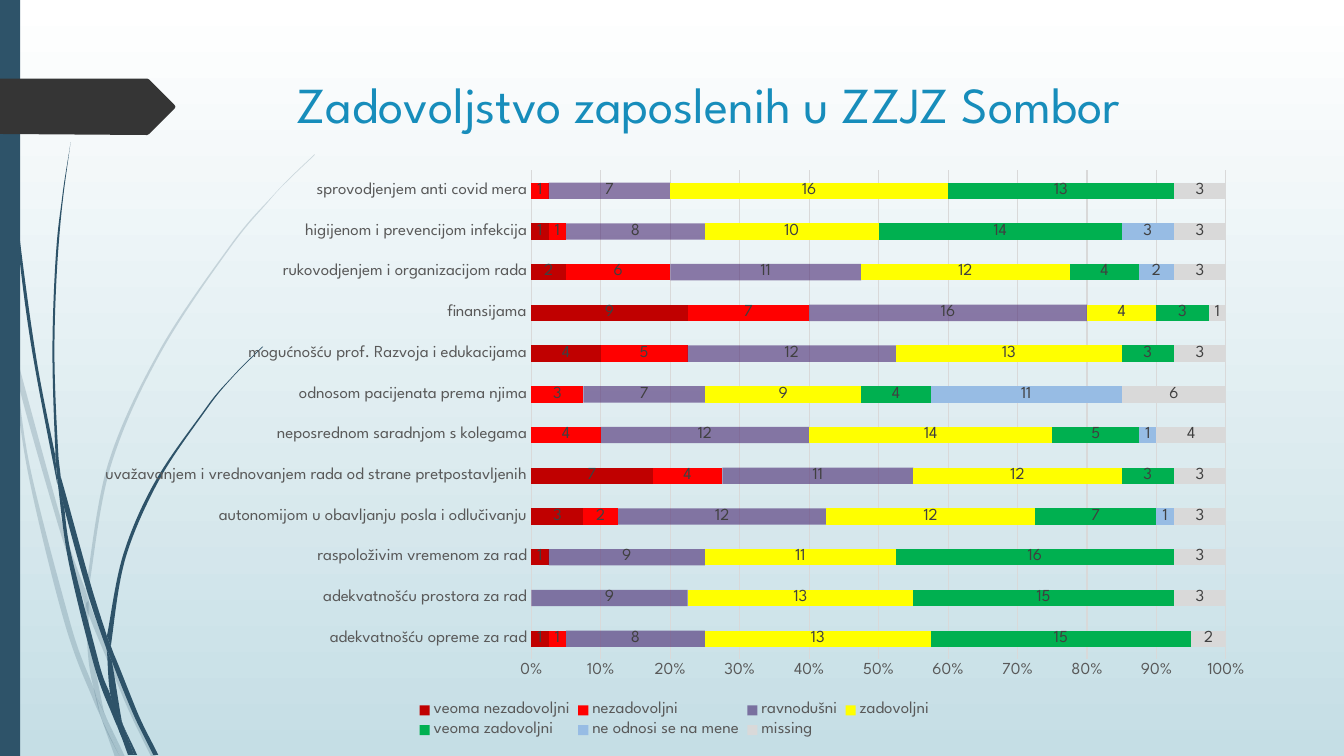
import dataclasses

import lxml.etree
import pptx
import pptx.chart.data
import pptx.dml.color
import pptx.enum.chart
import pptx.enum.shapes
import pptx.enum.text
import pptx.oxml
import pptx.oxml.ns
import pptx.util

PX = 9144  # one px is a hundredth of an inch


@dataclasses.dataclass(frozen=True)
class Theme:
    font: str = "League Spartan"
    title_size: int = 36
    chart_size: int = 12
    title: str = "178DBB"
    accent: str = "2E5369"
    tag: str = "353535"
    axis_text: str = "595959"
    label_text: str = "404040"
    grid: str = "D9D9D9"
    background: tuple = ("FFFFFF", "C5DEE5")


# Each blade of grass is a ring of smooth edges that meet at corners
PALE_BLADES = [
    ([(11, 350), (9, 322), (0, 282)], [(0, 299), (10, 344)]),
    ([(14, 345), (17, 376), (58, 522), (84, 599)], [(85, 586), (62, 520), (14, 345)]),
    ([(88, 596), (88, 610), (123, 694), (150, 751)], [(155, 751), (127, 692), (92, 607)]),
    ([(105, 711), (119, 751)], [(124, 751), (105, 711)]),
    ([(11, 350), (28, 470), (65, 621), (92, 693), (101, 714)],
     [(99, 707), (93, 683), (70, 619), (31, 469), (17, 376), (11, 350)]),
    ([(84, 599), (87, 646), (93, 683), (105, 711)], [(103, 706), (91, 646), (88, 610)]),
    ([(312, 153), (289, 175), (268, 197), (228, 244), (158, 348), (107, 461), (85, 584)],
     [(88, 596)],
     [(88, 584), (110, 462), (160, 349), (229, 245), (268, 198), (290, 175), (312, 154)]),
    ([(101, 714), (114, 751)], [(119, 751), (101, 714)]),
    ([(85, 586), (84, 599)], [(88, 610), (88, 596)]),
    ([(93, 683), (101, 714), (119, 751)], [(105, 711), (96, 692)]),
]
DARK_BLADES = [
    ([(3, 0), (4, 48), (7, 110), (17, 233), (33, 355), (57, 481)],
     [(55, 453), (36, 355), (19, 232), (8, 109), (5, 48), (4, 0)]),
    ([(60, 472), (64, 505), (88, 592), (106, 645)], [(106, 631), (93, 590), (60, 472)]),
    ([(110, 641), (111, 656), (132, 708), (152, 749)], [(157, 749), (136, 706), (113, 649)]),
    ([(57, 477), (68, 557), (93, 659), (111, 708), (117, 722)],
     [(116, 717), (110, 691), (98, 657), (72, 556), (64, 505)]),
    ([(70, 141), (62, 193), (56, 245), (52, 349), (55, 449), (60, 472)],
     [(58, 453), (54, 349), (58, 245), (63, 193), (70, 141)]),
    ([(122, 719), (133, 749)], [(136, 749), (122, 719)]),
    ([(55, 449), (57, 477), (64, 505)], [(60, 472), (55, 449)]),
    ([(260, 344), (231, 373), (204, 405), (156, 474), (122, 551), (106, 631)], [(110, 641)],
     [(111, 633), (125, 552), (158, 476), (205, 406), (231, 374), (261, 344)]),
    ([(117, 722), (127, 749)], [(131, 749), (117, 722)]),
    ([(106, 645), (110, 691), (122, 719)], [(121, 716), (111, 656)]),
    ([(106, 631), (106, 645)], [(111, 656), (110, 641)]),
    ([(110, 691), (117, 722), (130, 749)], [(133, 749), (122, 719), (116, 706)]),
]
TAG_OUTLINE = [(0, 78), (146, 78), (148, 79), (173, 104), (174, 106), (173, 108),
               (148, 133), (146, 134), (0, 133)]

CATEGORIES = [
    "adekvatnošću opreme za rad", "adekvatnošću prostora za rad",
    "raspoloživim vremenom za rad", "autonomijom u obavljanju posla i odlučivanju",
    "uvažavanjem i vrednovanjem rada od strane pretpostavljenih",
    "neposrednom saradnjom s kolegama", "odnosom pacijenata prema njima",
    "mogućnošću prof. Razvoja i edukacijama", "finansijama",
    "rukovodjenjem i organizacijom rada", "higijenom i prevencijom infekcija",
    "sprovodjenjem anti covid mera",
]
# Name, colour, opacity in percent, values
SERIES = [
    ("veoma nezadovoljni", "C00000", 100, [1, None, 1, 3, 7, None, None, 4, 9, 2, 1, None]),
    ("nezadovoljni", "FF0000", 100, [1, None, None, 2, 4, 4, 3, 5, 7, 6, 1, 1]),
    ("ravnodušni", "3F1C6A", 57, [8, 9, 9, 12, 11, 12, 7, 12, 16, 11, 8, 7]),
    ("zadovoljni", "FFFF00", 100, [13, 13, 11, 12, 12, 14, 9, 13, 4, 12, 10, 16]),
    ("veoma zadovoljni", "00B050", 100, [15, 15, 16, 7, 3, 5, 4, 3, 3, 4, 14, 13]),
    ("ne odnosi se na mene", "97BCE4", 100,
     [None, None, None, 1, None, 1, 11, None, None, 2, 3, None]),
    ("missing", "D9D9D9", 100, [2, 3, 3, 3, 3, 4, 6, 3, 1, 3, 3, 3]),
]


def rgb(color):
    return pptx.dml.color.RGBColor.from_string(color)


def bezier_points(edge):
    """Two handles and an end point for each step along a smooth edge."""
    padded = [edge[0], *edge, edge[-1]]
    points = []
    for before, start, end, after in zip(padded, padded[1:], padded[2:], padded[3:]):
        points.append(tuple(s + (e - b) / 6 for b, s, e in zip(before, start, end)))
        points.append(tuple(e - (a - s) / 6 for s, e, a in zip(start, end, after)))
        points.append(end)
    return points


class SlideBuilder:
    def __init__(self, slide, theme):
        self.slide, self.theme = slide, theme

    def background(self):
        fill = self.slide.background.fill
        fill.gradient()
        fill.gradient_angle = 270
        for stop, color, position in zip(fill.gradient_stops, self.theme.background, (0, 1)):
            stop.color.rgb, stop.position = rgb(color), position

    def paint(self, fill, color, opacity=100):
        fill.solid()
        fill.fore_color.rgb = rgb(color)
        if opacity < 100:
            color_node = next(fill._xPr.iter(pptx.oxml.ns.qn("a:srgbClr")))
            alpha = lxml.etree.SubElement(color_node, pptx.oxml.ns.qn("a:alpha"))
            alpha.set("val", str(opacity * 1000))

    def finish(self, shape, color, opacity=100):
        shape.shadow.inherit = False
        shape.line.fill.background()
        self.paint(shape.fill, color, opacity)

    def rectangle(self, left, top, width, height, color):
        shape = self.slide.shapes.add_shape(
            pptx.enum.shapes.MSO_SHAPE.RECTANGLE,
            left * PX, top * PX, width * PX, height * PX)
        self.finish(shape, color)

    def outline(self, points, color, opacity=100):
        builder = self.slide.shapes.build_freeform(*points[0], scale=PX)
        builder.add_line_segments(points[1:], close=True)
        shape = builder.convert_to_shape()
        self.finish(shape, color, opacity)
        return shape

    def blade(self, edges, opacity):
        points = [edges[0][0]]
        for edge in edges:
            if edge[0] != points[-1]:
                points += bezier_points([points[-1], edge[0]])
            points += bezier_points(edge)
        shape = self.outline(points, self.theme.accent, opacity)
        # Turn every three line steps into one curve
        lines = list(shape._element.iter(pptx.oxml.ns.qn("a:lnTo")))
        for first, second, third in zip(lines[::3], lines[1::3], lines[2::3]):
            curve = lxml.etree.Element(pptx.oxml.ns.qn("a:cubicBezTo"))
            first.addprevious(curve)
            for line in (first, second, third):
                curve.append(line[0])
                line.getparent().remove(line)

    def style_font(self, font, size, color):
        font.name, font.size = self.theme.font, pptx.util.Pt(size)
        font.color.rgb = rgb(color)

    def title(self, left, top, width, height, text):
        box = self.slide.shapes.add_textbox(left * PX, top * PX, width * PX, height * PX)
        frame = box.text_frame
        frame.word_wrap = True
        frame.vertical_anchor = pptx.enum.text.MSO_ANCHOR.TOP
        run = frame.paragraphs[0].add_run()
        run.text = text
        self.style_font(run.font, self.theme.title_size, self.theme.title)

    def place(self, parent, before, target, fractions):
        """Fix a chart part at fractions of the chart frame."""
        for old in parent.findall(pptx.oxml.ns.qn("c:layout")):
            parent.remove(old)
        inner = '<c:layoutTarget val="inner"/>' if target else ""
        sizes = "".join(f'<c:{key} val="{value}"/>' for key, value in zip("xywh", fractions))
        parent.find(pptx.oxml.ns.qn(before)).addprevious(pptx.oxml.parse_xml(
            f'<c:layout {pptx.oxml.ns.nsdecls("c")}><c:manualLayout>{inner}'
            f'<c:xMode val="edge"/><c:yMode val="edge"/>{sizes}</c:manualLayout></c:layout>'))

    def stacked_bars(self, left, top, width, height, plot_box, legend_box):
        theme, size = self.theme, self.theme.chart_size
        data = pptx.chart.data.CategoryChartData(number_format="General")
        data.categories = CATEGORIES
        for name, _, _, values in SERIES:
            data.add_series(name, values)
        chart = self.slide.shapes.add_chart(
            pptx.enum.chart.XL_CHART_TYPE.BAR_STACKED_100,
            left * PX, top * PX, width * PX, height * PX, data).chart
        chart.has_title = False
        self.style_font(chart.font, size, theme.axis_text)

        # Bars and labels
        plot = chart.plots[0]
        plot.gap_width, plot.overlap, plot.vary_by_categories = 150, 100, False
        for series, (_, color, opacity, _) in zip(plot.series, SERIES):
            self.paint(series.format.fill, color, opacity)
            series.data_labels.show_value = True
            self.style_font(series.data_labels.font, size, theme.label_text)

        # Axes
        for axis in (chart.category_axis, chart.value_axis):
            axis.major_tick_mark = axis.minor_tick_mark = pptx.enum.chart.XL_TICK_MARK.NONE
            axis.format.line.fill.background()
            self.style_font(axis.tick_labels.font, size, theme.axis_text)
        value_axis = chart.value_axis
        value_axis.major_unit = 0.1
        value_axis.tick_labels.number_format = "0%"
        value_axis.tick_labels.number_format_is_linked = False
        value_axis.major_gridlines.format.line.color.rgb = rgb(theme.grid)
        value_axis.major_gridlines.format.line.width = pptx.util.Pt(0.75)

        # Legend and layout
        chart.has_legend = True
        legend = chart.legend
        legend.position = pptx.enum.chart.XL_LEGEND_POSITION.BOTTOM
        legend.include_in_layout = False
        self.style_font(legend.font, size, theme.axis_text)
        frame = (width, height, width, height)
        for parent, before, target, box in (
                (plot._element.getparent(), "c:barChart", True, plot_box),
                (legend._element, "c:overlay", False, legend_box)):
            self.place(parent, before, target, [part / whole for part, whole in zip(box, frame)])


def main():
    presentation = pptx.Presentation()
    presentation.slide_width, presentation.slide_height = 1333 * PX, 750 * PX
    slide = presentation.slides.add_slide(presentation.slide_layouts[6])
    theme = Theme()
    builder = SlideBuilder(slide, theme)
    # Backdrop
    builder.background()
    for blades, opacity in ((PALE_BLADES, 20), (DARK_BLADES, 100)):
        for edges in blades:
            builder.blade(edges, opacity)
    builder.rectangle(0, 0, 20, 750, theme.accent)
    builder.outline(TAG_OUTLINE, theme.tag)
    # Content
    builder.title(284, 68, 975, 140, "Zadovoljstvo zaposlenih u ZZJZ Sombor")
    builder.stacked_bars(81, 157, 1177, 579, (446, 12, 689, 485), (327, 536, 522, 43))
    presentation.save("out.pptx")


if __name__ == "__main__":
    main()
